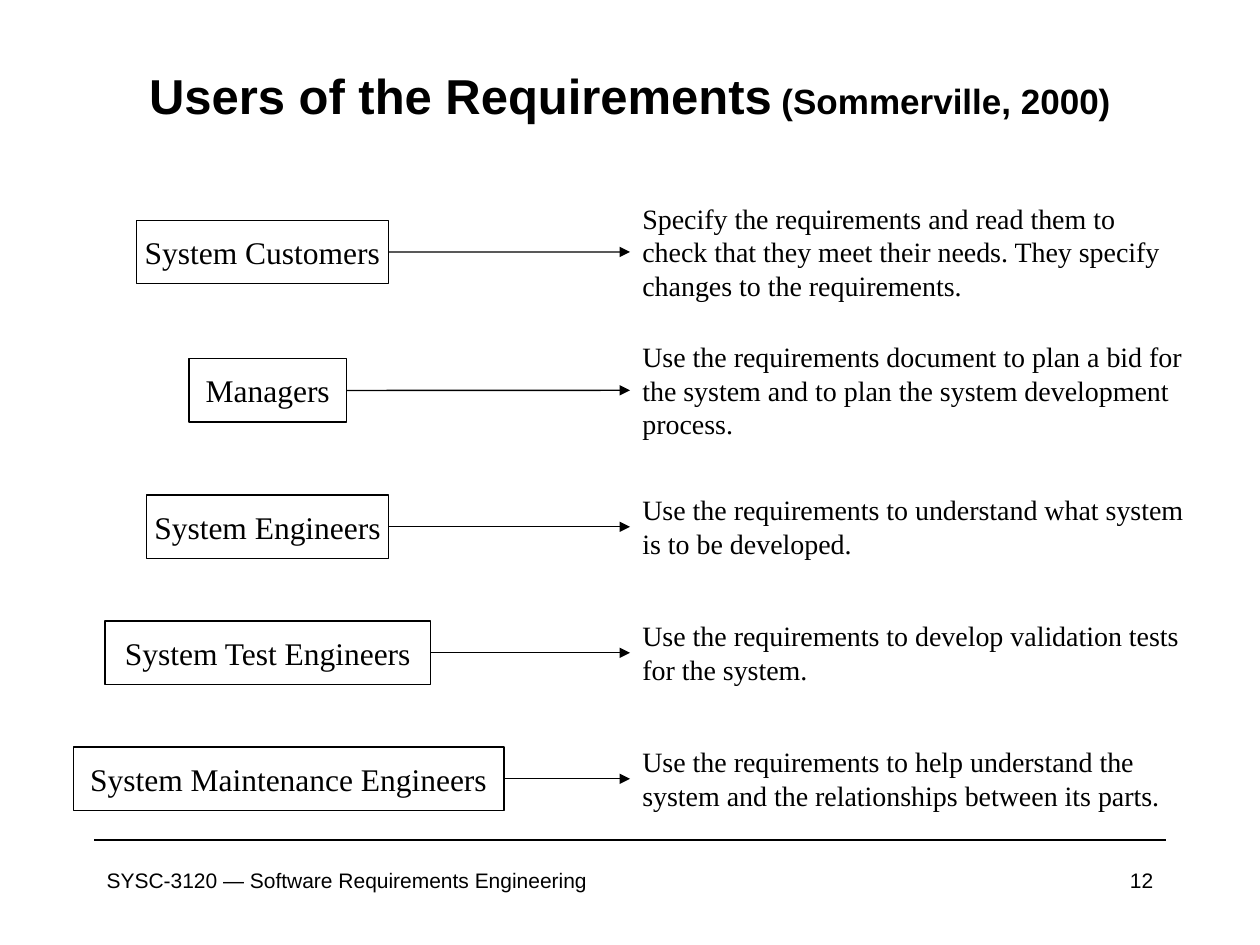
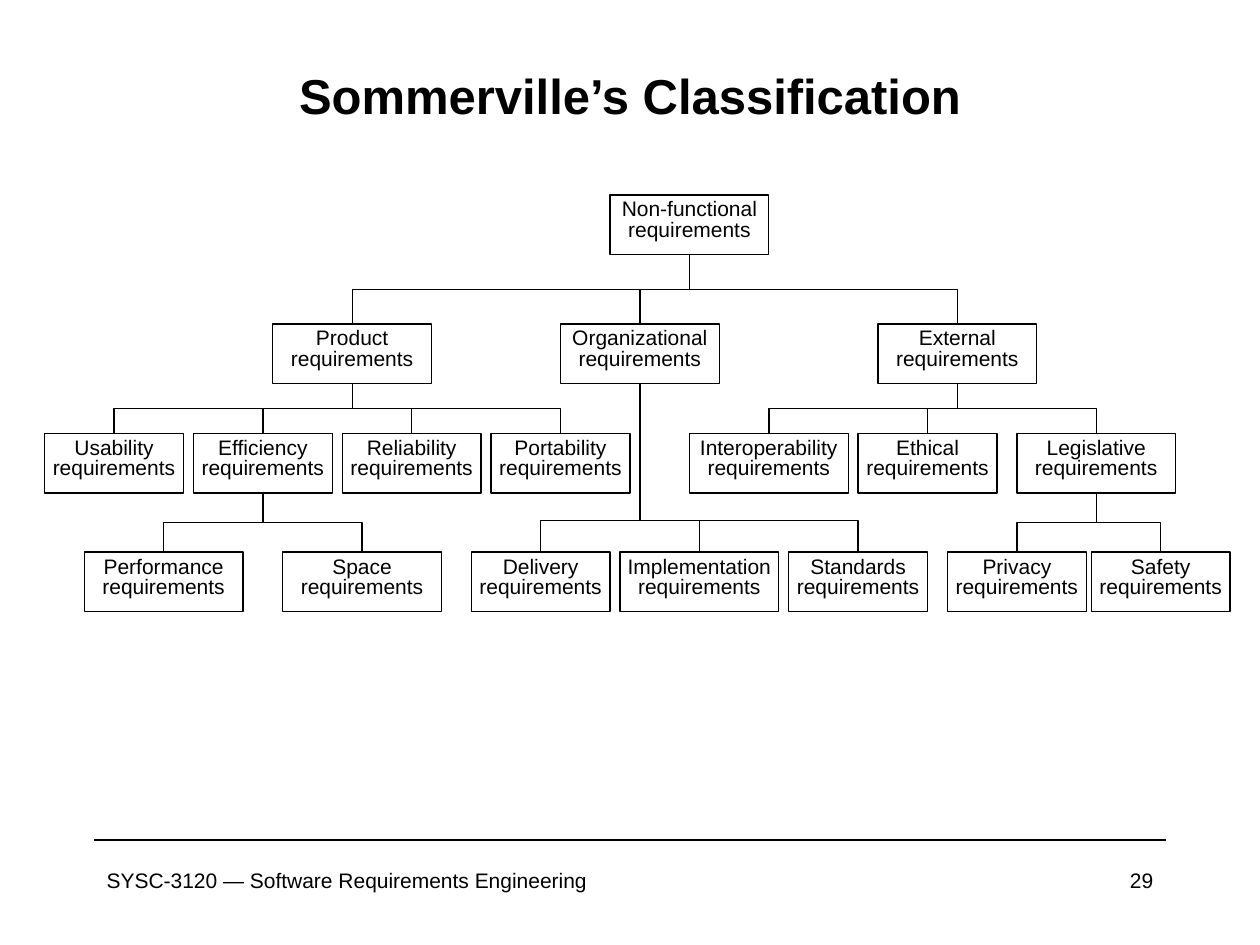
from lxml import etree
from pptx import Presentation
from pptx import util as u
from pptx.dml.color import RGBColor
from pptx.enum import shapes, text
from pptx.oxml import ns

COLORS = {"ink": "000000", "paper": "FFFFFF"}
SANS, SERIF = "Arial", "Times New Roman"
LEFT, CENTER, RIGHT = text.PP_ALIGN.LEFT, text.PP_ALIGN.CENTER, text.PP_ALIGN.RIGHT
RECT = shapes.MSO_SHAPE.RECTANGLE
STRAIGHT, ELBOW = shapes.MSO_CONNECTOR.STRAIGHT, shapes.MSO_CONNECTOR.ELBOW


def write(holder, wording, size, font, align=LEFT, wrap=True):
    holder.text_frame.word_wrap = wrap
    paragraph = holder.text_frame.paragraphs[0]
    paragraph.text = wording
    paragraph.alignment = align
    paragraph.font.size = u.Pt(size)
    paragraph.font.name = font
    paragraph.font.color.rgb = RGBColor.from_string(COLORS["ink"])
    return paragraph


def draw_line(item, width=0.75):
    item.line.color.rgb = RGBColor.from_string(COLORS["ink"])
    item.line.width = u.Pt(width)
    if item.element.spPr.find(ns.qn("a:effectLst")) is None:
        etree.SubElement(item.element.spPr, ns.qn("a:effectLst"))


deck = Presentation()
deck.slide_width, deck.slide_height = u.Cm(25.4), u.Cm(19.05)

pages = []
for heading, source, number in [
    ("Users of the Requirements", " (Sommerville, 2000)", 12),
    ("Sommerville’s Classification", "", 29),
]:
    page = deck.slides.add_slide(deck.slide_layouts[6])
    pages.append(page)
    rule = page.shapes.add_connector(STRAIGHT, u.Cm(1.9), u.Cm(16.93), u.Cm(23.5), u.Cm(16.93))
    draw_line(rule, 1)
    course = page.shapes.add_textbox(u.Cm(1.9), u.Cm(17.36), u.Cm(10.8), u.Cm(1.27))
    write(course, "SYSC-3120 — Software Requirements Engineering", 12, SANS)
    folio = page.shapes.add_textbox(u.Cm(18.2), u.Cm(17.36), u.Cm(5.3), u.Cm(1.27))
    write(folio, str(number), 12, SANS, RIGHT)
    title = page.shapes.add_textbox(u.Cm(0.9), u.Cm(1.17), u.Cm(23.6), u.Cm(1.48))
    title.text_frame.vertical_anchor = text.MSO_ANCHOR.MIDDLE
    title_line = write(title, heading, 28, SANS, CENTER)
    title_line.font.bold = True
    if source:
        citation = title_line.add_run()
        citation.text = source
        citation.font.size = u.Pt(20)

users_page, tree_page = pages

users = [
    ("System Customers", 2.75, 5.08, 5.08, 2.3,
     "Specify the requirements and read them to check that they meet their needs. "
     "They specify changes to the requirements."),
    ("Managers", 3.81, 3.18, 7.87, 2.3,
     "Use the requirements document to plan a bid for the system and to plan the "
     "system development process."),
    ("System Engineers", 2.96, 4.87, 10.62, 1.62,
     "Use the requirements to understand what system is to be developed."),
    ("System Test Engineers", 2.12, 6.56, 13.16, 1.62,
     "Use the requirements to develop validation tests for the system."),
    ("System Maintenance Engineers", 1.48, 8.68, 15.7, 1.62,
     "Use the requirements to help understand the system and the relationships "
     "between its parts."),
]
for role, left, width, middle, use_height, use in users:
    user = users_page.shapes.add_shape(
        RECT, u.Cm(left), u.Cm(middle - 0.64), u.Cm(width), u.Cm(1.28))
    user.fill.background()
    user.shadow.inherit = False
    draw_line(user)
    user.text_frame.vertical_anchor = text.MSO_ANCHOR.MIDDLE
    write(user, role, 18, SERIF, CENTER, wrap=False)

    purpose = users_page.shapes.add_textbox(
        u.Cm(12.7), u.Cm(middle - use_height / 2), u.Cm(11.43), u.Cm(use_height))
    write(purpose, use, 16, SERIF)

    arrow = users_page.shapes.add_connector(
        STRAIGHT, u.Cm(left + width), u.Cm(middle), u.Cm(12.7), u.Cm(middle))
    arrow.begin_connect(user, 3)
    arrow.end_connect(purpose, 1)
    draw_line(arrow)
    etree.SubElement(arrow.line._get_or_add_ln(), ns.qn("a:tailEnd"), type="triangle")

LEVEL_TOPS = [3.93, 6.53, 8.74, 11.13]
WIDE, NARROW = 3.2, 2.8
kinds = [
    ("Non-functional", None, 0, 12.3, WIDE),
    ("Product", "Non-functional", 1, 5.5, WIDE),
    ("Organizational", "Non-functional", 1, 11.3, WIDE),
    ("External", "Non-functional", 1, 17.7, WIDE),
    ("Usability", "Product", 2, 0.9, NARROW),
    ("Efficiency", "Product", 2, 3.9, NARROW),
    ("Reliability", "Product", 2, 6.9, NARROW),
    ("Portability", "Product", 2, 9.9, NARROW),
    ("Interoperability", "External", 2, 13.9, WIDE),
    ("Ethical", "External", 2, 17.3, NARROW),
    ("Legislative", "External", 2, 20.5, WIDE),
    ("Performance", "Efficiency", 3, 1.7, WIDE),
    ("Space", "Efficiency", 3, 5.7, WIDE),
    ("Delivery", "Organizational", 3, 9.5, NARROW),
    ("Implementation", "Organizational", 3, 12.5, WIDE),
    ("Standards", "Organizational", 3, 15.9, NARROW),
    ("Privacy", "Legislative", 3, 19.1, NARROW),
    ("Safety", "Legislative", 3, 22, NARROW),
]
nodes = {}
for kind, parent_kind, level, left, width in kinds:
    node = tree_page.shapes.add_shape(
        RECT, u.Cm(left), u.Cm(LEVEL_TOPS[level]), u.Cm(width), u.Cm(1.2))
    nodes[kind] = node
    node.fill.solid()
    node.fill.fore_color.rgb = RGBColor.from_string(COLORS["paper"])
    node.shadow.inherit = False
    draw_line(node)
    frame = node.text_frame
    frame.margin_left = frame.margin_right = frame.margin_bottom = u.Cm(0.1)
    frame.margin_top = u.Cm(0.12)
    frame.vertical_anchor = text.MSO_ANCHOR.TOP
    write(node, kind + " requirements", 12, SANS, CENTER).line_spacing = 0.8
    if parent_kind is None:
        continue

    parent = nodes[parent_kind]
    start_x, start_y = parent.left + parent.width // 2, parent.top + parent.height
    end_x, end_y = node.left + node.width // 2, node.top
    branch = tree_page.shapes.add_connector(ELBOW, start_x, start_y, end_x, end_y)
    branch.begin_connect(parent, 2)
    branch.end_connect(node, 0)
    draw_line(branch)

    drop, reach = end_y - start_y, abs(end_x - start_x)
    branch.left = (start_x + end_x - drop) // 2
    branch.top = (start_y + end_y - reach) // 2
    branch.width, branch.height = drop, reach
    goes_right = end_x > start_x
    placement = branch.element.spPr.find(ns.qn("a:xfrm"))
    placement.set("rot", str((270 if goes_right else 90) * 60000))
    placement.set("flipH", "1" if goes_right else "0")
    placement.set("flipV", "0")
    bend = 81100 if parent_kind == "Organizational" else 50000
    guides = branch.element.spPr.find(ns.qn("a:prstGeom")).find(ns.qn("a:avLst"))
    etree.SubElement(guides, ns.qn("a:gd"), name="adj1", fmla=f"val {bend}")

deck.save("out.pptx")
